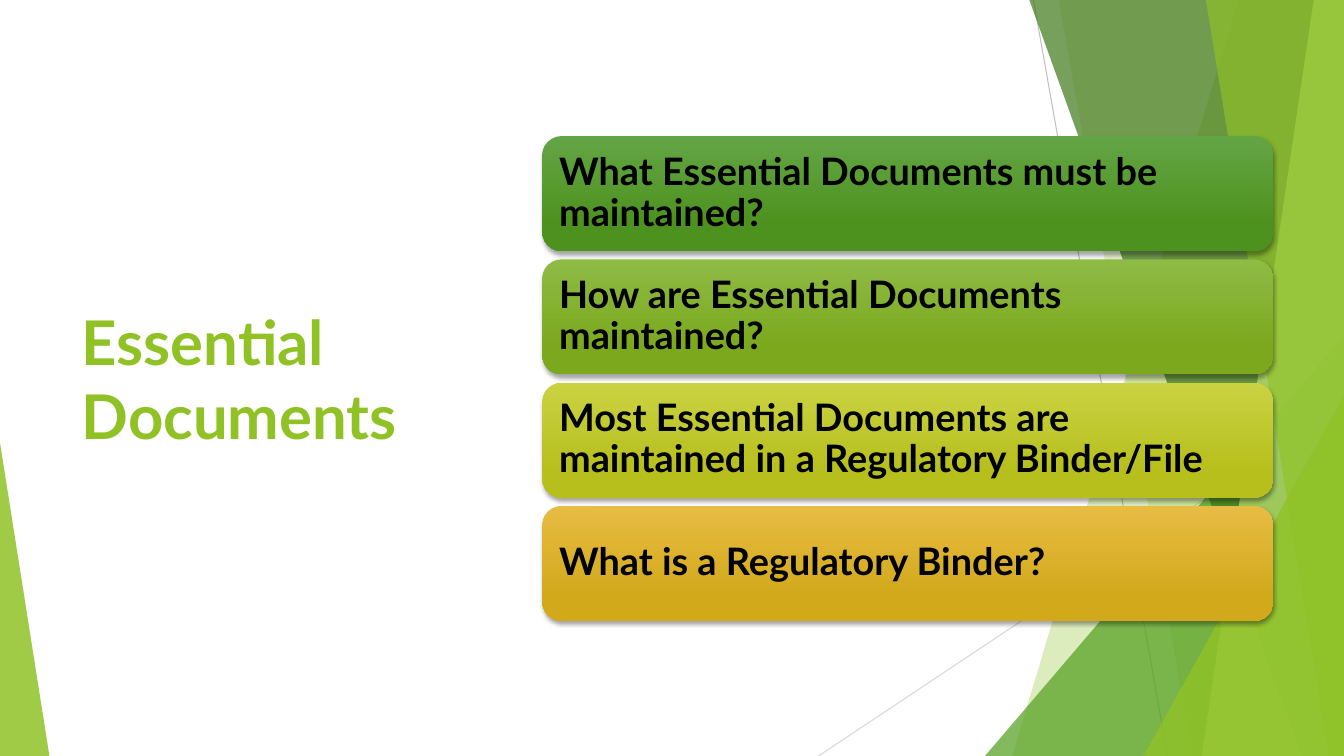
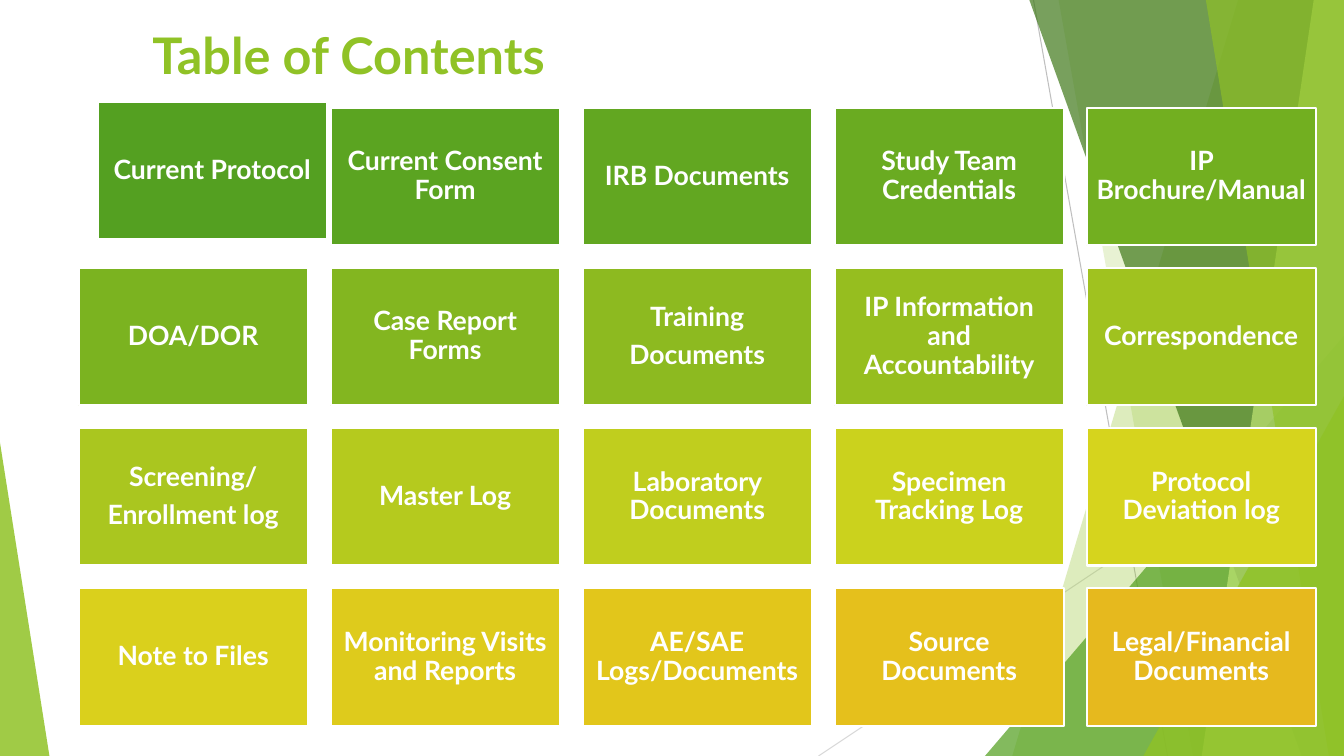
from colorsys import hls_to_rgb, rgb_to_hls
from dataclasses import dataclass

from lxml.etree import SubElement
from pptx import Presentation
from pptx.dml.color import RGBColor
from pptx.enum.shapes import MSO_CONNECTOR, MSO_SHAPE
from pptx.enum.text import MSO_ANCHOR, MSO_AUTO_SIZE, PP_ALIGN
from pptx.oxml.ns import qn
from pptx.util import Inches, Pt

WIDTH, HEIGHT = Inches(13.33), Inches(7.5)
FONT = "Lato"
BLACK = RGBColor(0x00, 0x00, 0x00)
WHITE = RGBColor(0xFF, 0xFF, 0xFF)
LIME = RGBColor(0x90, 0xC2, 0x26)
GREEN = RGBColor(0x54, 0xA0, 0x21)
FOREST = RGBColor(0x3F, 0x78, 0x19)
PALE_LIME = RGBColor(0xC0, 0xE4, 0x74)
AMBER = RGBColor(0xE6, 0xB9, 0x1E)
GRAY = RGBColor(0xBF, 0xBF, 0xBF)
LIGHT_GRAY = RGBColor(0xD9, 0xD9, 0xD9)

QUESTIONS = [
    ("What Essential Documents must be maintained?",
     RGBColor(0x63, 0xA5, 0x45), RGBColor(0x4D, 0x92, 0x1E)),
    ("How are Essential Documents maintained?",
     RGBColor(0x8E, 0xBB, 0x44), RGBColor(0x7B, 0xA8, 0x1D)),
    ("Most Essential Documents are maintained in a Regulatory Binder/File",
     RGBColor(0xCA, 0xD2, 0x43), RGBColor(0xB6, 0xBF, 0x1B)),
    ("What is a Regulatory Binder?",
     RGBColor(0xE7, 0xBC, 0x43), RGBColor(0xD2, 0xA9, 0x1B)),
]

CONTENTS = [
    ["Current Protocol", "Current Consent Form", "IRB Documents",
     "Study Team Credentials", "IP Brochure/Manual"],
    ["DOA/DOR", "Case Report Forms", "Training\nDocuments",
     "IP Information and Accountability", "Correspondence"],
    ["Screening/\nEnrollment log", "Master Log", "Laboratory Documents",
     "Specimen Tracking Log", "Protocol Deviation log"],
    ["Note to Files", "Monitoring Visits and Reports", "AE/SAE Logs/Documents",
     "Source Documents", "Legal/Financial Documents"],
]


@dataclass
class Box:
    left: int
    top: int
    width: int
    height: int

    def point(self, across, down):
        return (round(self.left + self.width * across / 100),
                round(self.top + self.height * down / 100))

    def section(self, across, down, width, height):
        return Box(*self.point(across, down),
                   round(self.width * width / 100), round(self.height * height / 100))

    def bounds(self):
        return self.left, self.top, self.width, self.height


PAGE = Box(0, 0, WIDTH, HEIGHT)


def write_text(shape, text, size, color, align=PP_ALIGN.LEFT, anchor=MSO_ANCHOR.MIDDLE,
               inset=None, line_spacing=1.0, space_after=0):
    frame = shape.text_frame
    frame.text = text
    frame.word_wrap = True
    frame.auto_size = MSO_AUTO_SIZE.NONE
    frame.vertical_anchor = anchor
    if inset is not None:
        frame.margin_left = frame.margin_right = Inches(inset)
        frame.margin_top = frame.margin_bottom = Inches(inset)
    for paragraph in frame.paragraphs:
        paragraph.alignment = align
        paragraph.line_spacing = line_spacing
        paragraph.space_before = Pt(0)
        paragraph.space_after = Pt(space_after)
        for run in paragraph.runs:
            run.font.name = FONT
            run.font.size = Pt(size)
            run.font.bold = True
            run.font.color.rgb = color


def add_title(slide, box, text, size, anchor):
    title = slide.shapes.title
    title.left, title.top, title.width, title.height = box.bounds()
    write_text(title, text, size, LIME, anchor=anchor)


def fill_glass(shape, color, opacity):
    shape.shadow.inherit = False
    shape.fill.solid()
    shape.fill.fore_color.rgb = color
    shape.line.fill.background()
    tint = shape.element.spPr.find(qn("a:solidFill")).find(qn("a:srgbClr"))
    SubElement(tint, qn("a:alpha")).set("val", str(opacity * 1000))
    return shape


def add_hairline(slide, box, start, end, color):
    line = slide.shapes.add_connector(
        MSO_CONNECTOR.STRAIGHT, *box.point(*start), *box.point(*end))
    line.line.color.rgb = color
    line.line.width = Pt(0.75)
    SubElement(line.element.spPr, qn("a:effectLst"))
    return line


def add_pane(slide, box, top, bottom, color, opacity):
    builder = slide.shapes.build_freeform(*box.point(top, 0))
    corners = [(100, 0), (100, 100), (bottom, 100)]
    builder.add_line_segments([box.point(*corner) for corner in corners], close=True)
    return fill_glass(builder.convert_to_shape(), color, opacity)


def add_wedge(slide, box, apex, color, opacity):
    wedge = slide.shapes.add_shape(MSO_SHAPE.ISOSCELES_TRIANGLE, *box.bounds())
    wedge.adjustments[0] = apex
    return fill_glass(wedge, color, opacity)


def add_backdrop(slide, box):
    facets = [
        add_hairline(slide, box, (76.9, 0), (86.87, 100), GRAY),
        add_hairline(slide, box, (100, 53.73), (60.9, 100), LIGHT_GRAY),
        add_pane(slide, box, 92.12, 75.32, LIME, 30),
        add_pane(slide, box, 78.77, 88.75, LIME, 20),
        add_wedge(slide, box.section(73.29, 44.4, 26.71, 55.6), 1, GREEN, 72),
        add_pane(slide, box, 76.59, 96.85, FOREST, 70),
        add_pane(slide, box, 97.75, 89.42, PALE_LIME, 70),
        add_pane(slide, box, 89.72, 98.87, LIME, 65),
        add_wedge(slide, box.section(85.07, 52.4, 14.93, 47.6), 1, LIME, 80),
        add_wedge(slide, box.section(0, 58.53, 3.68, 41.47), 0, LIME, 85),
    ]
    layout_tree = slide.slide_layout.shapes.element
    for position, facet in enumerate(facets, start=2):
        layout_tree.insert(position, facet.element)


def add_soft_shadow(shape):
    shape.shadow.inherit = False
    effects = shape.element.spPr.find(qn("a:effectLst"))
    shadow = SubElement(effects, qn("a:outerShdw"), blurRad=str(Pt(3)),
                        dist=str(Pt(2)), dir="5400000", rotWithShape="0")
    tint = SubElement(shadow, qn("a:srgbClr"), val=str(BLACK))
    SubElement(tint, qn("a:alpha"), val="35000")


def add_question_stack(slide, box):
    pitch = 25.43
    height = 100 - pitch * (len(QUESTIONS) - 1)
    for row, (question, upper, lower) in enumerate(QUESTIONS):
        bar = slide.shapes.add_shape(
            MSO_SHAPE.ROUNDED_RECTANGLE, *box.section(0, row * pitch, 100, height).bounds())
        add_soft_shadow(bar)
        bar.line.fill.background()
        bar.fill.gradient()
        bar.fill.gradient_angle = 270
        for stop, position, color in zip(bar.fill.gradient_stops, (0, 0.78), (upper, lower)):
            stop.position = position
            stop.color.rgb = color
        write_text(bar, question, 27, BLACK, inset=0.11, line_spacing=0.9)


def blend(start, end, share):
    first, last = (rgb_to_hls(*(channel / 255 for channel in color))
                   for color in (start, end))
    mixed = [a + (b - a) * share for a, b in zip(first, last)]
    return RGBColor(*(round(channel * 255) for channel in hls_to_rgb(*mixed)))


def add_contents_grid(slide, box):
    rows, columns = len(CONTENTS), len(CONTENTS[0])
    width = box.width / (columns + 0.1 * (columns - 1))
    gap = 0.1 * width
    height = (box.height - gap * (rows - 1)) / rows
    for row, labels in enumerate(CONTENTS):
        for column, label in enumerate(labels):
            index = row * columns + column
            left = box.left + column * (width + gap)
            top = box.top + row * (height + gap)
            if index == 0:
                left += 0.0142 * WIDTH
                top -= 0.008 * HEIGHT
            tile = slide.shapes.add_shape(
                MSO_SHAPE.RECTANGLE, round(left), round(top), round(width), round(height))
            tile.shadow.inherit = False
            tile.fill.solid()
            tile.fill.fore_color.rgb = blend(GREEN, AMBER, index / (rows * columns - 1))
            tile.line.color.rgb = WHITE
            tile.line.width = Pt(1.5)
            write_text(tile, label, 19, WHITE, align=PP_ALIGN.CENTER, inset=0.08,
                       line_spacing=0.9, space_after=6.65)


def build_questions_slide(slide, box):
    add_title(slide, box.section(5.33, 20.13, 29.1, 59.73), "Essential Documents", 44,
              MSO_ANCHOR.MIDDLE)
    add_question_stack(slide, box.section(40.36, 18, 54.39, 64.13))


def build_contents_slide(slide, box):
    add_title(slide, box.section(10.58, 2.53, 83.65, 10.93), "Table of Contents", 36,
              MSO_ANCHOR.TOP)
    add_contents_grid(slide, box.section(5.85, 14.27, 92.05, 81.73))


def main():
    presentation = Presentation()
    presentation.slide_width, presentation.slide_height = WIDTH, HEIGHT
    title_only = presentation.slide_layouts[5]
    questions_slide = presentation.slides.add_slide(title_only)
    add_backdrop(questions_slide, PAGE)
    build_questions_slide(questions_slide, PAGE)
    build_contents_slide(presentation.slides.add_slide(title_only), PAGE)
    presentation.save("out.pptx")


if __name__ == "__main__":
    main()
